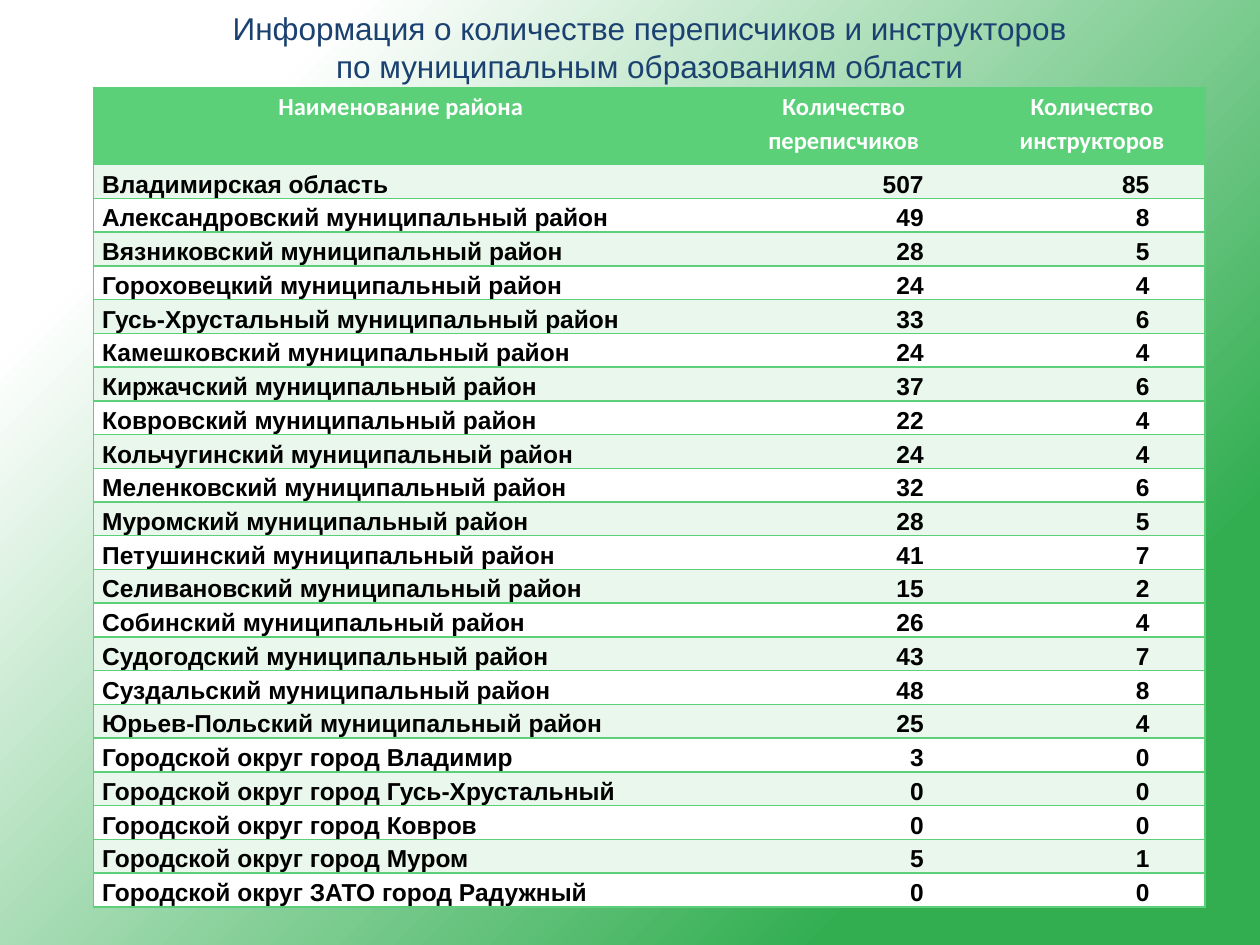
from typing import NamedTuple

from lxml import etree
from pptx import Presentation
from pptx.dml.color import RGBColor
from pptx.enum.text import MSO_ANCHOR, MSO_AUTO_SIZE, PP_ALIGN
from pptx.oxml.ns import qn
from pptx.util import Cm, Pt

LEFT, CENTER, RIGHT = PP_ALIGN.LEFT, PP_ALIGN.CENTER, PP_ALIGN.RIGHT
TOP, MIDDLE, BOTTOM = MSO_ANCHOR.TOP, MSO_ANCHOR.MIDDLE, MSO_ANCHOR.BOTTOM
NO_AUTOFIT = MSO_AUTO_SIZE.NONE
TITLE_ONLY_LAYOUT = 5

COLORS = {
    "white": "FFFFFF",
    "black": "000000",
    "title": "1B4171",
    "accent": "5BD078",
    "band": "EAF7EC",
    "backdrop": "32AE51",
}


class District(NamedTuple):
    name: str
    enumerators: int
    instructors: int


TITLE = "Информация о количестве переписчиков и инструкторов\vпо муниципальным образованиям области"
HEADERS = ("Наименование района", "Количество переписчиков", "Количество инструкторов")
MUNICIPAL = "муниципальный район"
CITY = "Городской округ город"
DISTRICTS = [
    District("Владимирская область", 507, 85),
    District(f"Александровский {MUNICIPAL}", 49, 8),
    District(f"Вязниковский {MUNICIPAL}", 28, 5),
    District(f"Гороховецкий {MUNICIPAL}", 24, 4),
    District(f"Гусь-Хрустальный {MUNICIPAL}", 33, 6),
    District(f"Камешковский {MUNICIPAL}", 24, 4),
    District(f"Киржачский {MUNICIPAL}", 37, 6),
    District(f"Ковровский {MUNICIPAL}", 22, 4),
    District(f"Кольчугинский {MUNICIPAL}", 24, 4),
    District(f"Меленковский {MUNICIPAL}", 32, 6),
    District(f"Муромский {MUNICIPAL}", 28, 5),
    District(f"Петушинский {MUNICIPAL}", 41, 7),
    District(f"Селивановский {MUNICIPAL}", 15, 2),
    District(f"Собинский {MUNICIPAL}", 26, 4),
    District(f"Судогодский {MUNICIPAL}", 43, 7),
    District(f"Суздальский {MUNICIPAL}", 48, 8),
    District(f"Юрьев-Польский {MUNICIPAL}", 25, 4),
    District(f"{CITY} Владимир", 3, 0),
    District(f"{CITY} Гусь-Хрустальный", 0, 0),
    District(f"{CITY} Ковров", 0, 0),
    District(f"{CITY} Муром", 5, 1),
    District("Городской округ ЗАТО город Радужный", 0, 0),
]

COLUMN_WIDTHS = (Cm(12.4), Cm(5.46), Cm(4.55))
HEADER_HEIGHT, ROW_HEIGHT = Cm(1.55), Cm(0.68)
CELL_MARGIN, NUMBER_MARGIN = Cm(0.18), Cm(1.12)


def color(name: str) -> RGBColor:
    return RGBColor.from_string(COLORS[name])


def write_text(text_frame, text: str, *, size: float, font: str, color_name: str,
               bold: bool = False, align=LEFT, line_spacing: float = 1.0) -> None:
    paragraph = text_frame.paragraphs[0]
    paragraph.text = text
    paragraph.alignment = align
    paragraph.line_spacing = line_spacing
    for run in paragraph.runs:
        run.font.size = Pt(size)
        run.font.name = font
        run.font.bold = bold
        run.font.color.rgb = color(color_name)


def set_borders(cell, column: int) -> None:
    visible = {"L": column == 0, "R": column == len(HEADERS) - 1, "T": True, "B": True}
    properties = cell._tc.get_or_add_tcPr()
    for side, shown in visible.items():
        line = etree.SubElement(properties, qn(f"a:ln{side}"), w=str(Pt(1)))
        fill = etree.SubElement(line, qn("a:solidFill" if shown else "a:noFill"))
        if shown:
            etree.SubElement(fill, qn("a:srgbClr"), val=COLORS["accent"])


def draw_cell(cell, text: str, column: int, *, fill: str, font: str, color_name: str,
              align, anchor, margin_right: int = CELL_MARGIN) -> None:
    cell.margin_left, cell.margin_right = CELL_MARGIN, margin_right
    cell.margin_top = cell.margin_bottom = 0
    cell.vertical_anchor = anchor
    set_borders(cell, column)
    cell.fill.solid()
    cell.fill.fore_color.rgb = color(fill)
    write_text(cell.text_frame, text, size=14, font=font, color_name=color_name,
               bold=True, align=align, line_spacing=1.15)


def draw_background(slide) -> None:
    fill = slide.background.fill
    fill.gradient()
    fill.gradient_angle = 315
    for stop, (position, name) in zip(fill.gradient_stops, ((0.16, "white"), (0.8, "backdrop"))):
        stop.position = position
        stop.color.rgb = color(name)


def draw_title(slide) -> None:
    title = slide.shapes.title
    title.left, title.top, title.width, title.height = Cm(1.9), Cm(0.05), Cm(22.4), Cm(1.8)
    title.text_frame.word_wrap = True
    title.text_frame.auto_size = NO_AUTOFIT
    title.text_frame.vertical_anchor = MIDDLE
    write_text(title.text_frame, TITLE, size=18, font="Arial", color_name="title", align=CENTER)


def draw_table(slide) -> None:
    height = HEADER_HEIGHT + ROW_HEIGHT * len(DISTRICTS)
    table = slide.shapes.add_table(len(DISTRICTS) + 1, len(HEADERS), Cm(1.88), Cm(1.77),
                                   sum(COLUMN_WIDTHS), height).table
    table.horz_banding = False
    for column, width in zip(table.columns, COLUMN_WIDTHS):
        column.width = width
    table.rows[0].height = HEADER_HEIGHT
    for column, header in enumerate(HEADERS):
        draw_cell(table.cell(0, column), header, column, fill="accent", font="Calibri",
                  color_name="white", align=CENTER, anchor=TOP)
    for row, district in enumerate(DISTRICTS, start=1):
        table.rows[row].height = ROW_HEIGHT
        for column, value in enumerate(district):
            is_number = column > 0
            draw_cell(table.cell(row, column), str(value), column,
                      fill="band" if row % 2 else "white", font="Arial", color_name="black",
                      align=RIGHT if is_number else LEFT, anchor=BOTTOM,
                      margin_right=NUMBER_MARGIN if is_number else CELL_MARGIN)


def main() -> None:
    presentation = Presentation()
    presentation.slide_width, presentation.slide_height = Cm(25.4), Cm(19.05)
    slide = presentation.slides.add_slide(presentation.slide_layouts[TITLE_ONLY_LAYOUT])
    draw_background(slide)
    draw_title(slide)
    draw_table(slide)
    presentation.save("out.pptx")


if __name__ == "__main__":
    main()
